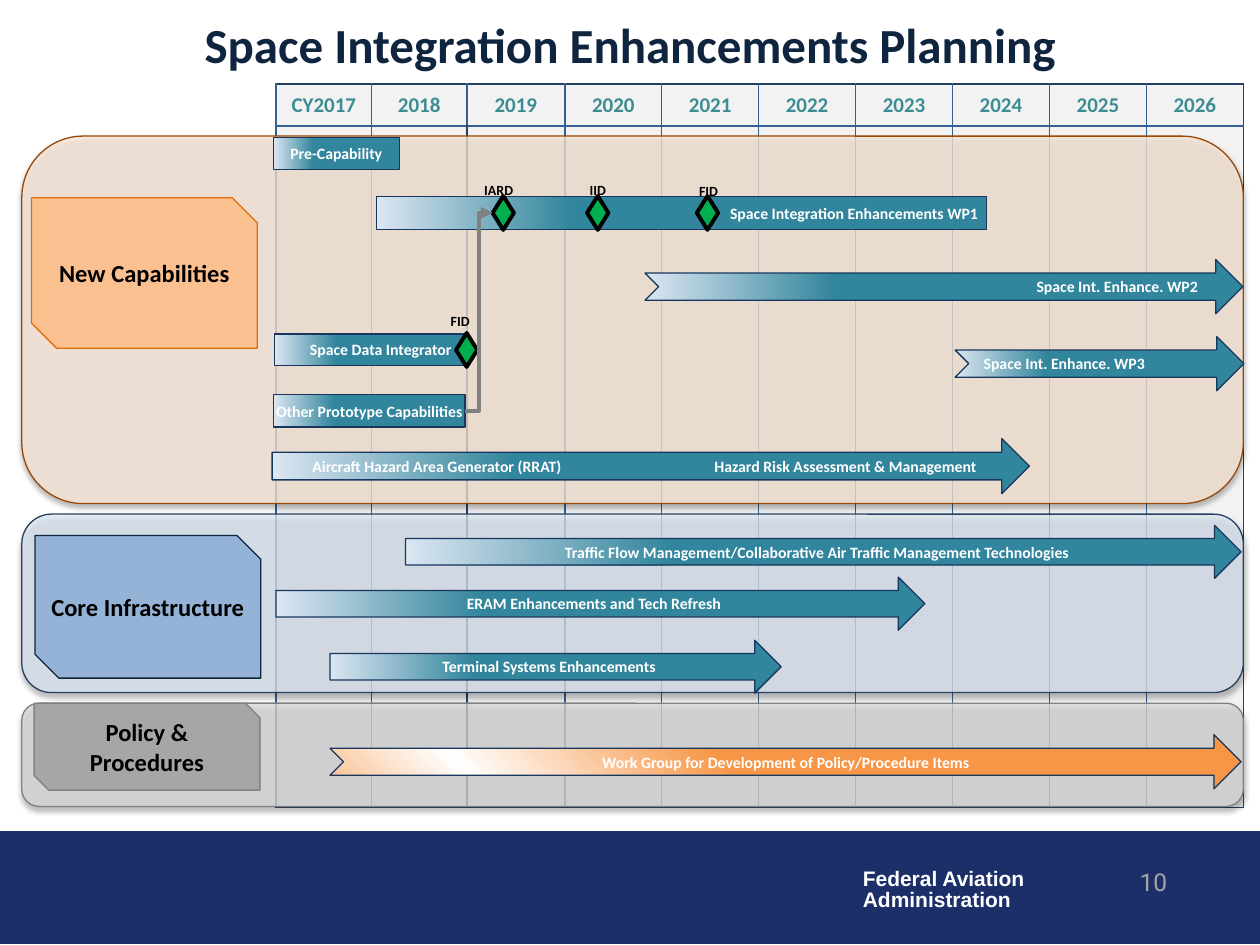
from lxml.etree import SubElement
from pptx import Presentation
from pptx.dml.color import RGBColor
from pptx.enum.shapes import MSO_CONNECTOR, MSO_SHAPE
from pptx.enum.text import MSO_ANCHOR, MSO_AUTO_SIZE, PP_ALIGN
from pptx.oxml import parse_xml
from pptx.oxml.ns import nsdecls, qn
from pptx.util import Pt

WHITE = RGBColor(0xFF, 0xFF, 0xFF)
BLACK = RGBColor(0x00, 0x00, 0x00)
NAVY = RGBColor(0x1D, 0x2F, 0x68)
TITLE_INK = RGBColor(0x0F, 0x24, 0x3E)
YEAR_INK = RGBColor(0x3C, 0x8C, 0x93)
PALE_GRAY = RGBColor(0xF2, 0xF2, 0xF2)
LIGHT_GRAY = RGBColor(0xD9, 0xD9, 0xD9)
MID_GRAY = RGBColor(0xA6, 0xA6, 0xA6)
DARK_GRAY = RGBColor(0x80, 0x80, 0x80)
GRID_BLUE = RGBColor(0x37, 0x60, 0x92)
DEEP_BLUE = RGBColor(0x25, 0x40, 0x61)
BAR_EDGE = RGBColor(0x17, 0x37, 0x5E)
TEAL = RGBColor(0x31, 0x85, 0x9C)
ICE = RGBColor(0xDC, 0xE6, 0xF2)
SKY = RGBColor(0x95, 0xB3, 0xD7)
CREAM = RGBColor(0xFD, 0xEA, 0xDA)
PEACH = RGBColor(0xFA, 0xC0, 0x90)
ORANGE = RGBColor(0xF7, 0x96, 0x46)
RUST = RGBColor(0x98, 0x48, 0x07)
AMBER = RGBColor(0xE4, 0x6C, 0x0A)
GREEN = RGBColor(0x00, 0xB0, 0x50)

TEAL_FADE = ([(0, TEAL), (68, TEAL), (100, ICE)], 180)
ORANGE_FADE = ([(0, PEACH), (16, WHITE), (44, ORANGE)], 315)
BOX, ARROW, NOTCHED = MSO_SHAPE.RECTANGLE, MSO_SHAPE.RIGHT_ARROW, MSO_SHAPE.NOTCHED_RIGHT_ARROW
LEFT, CENTER, RIGHT = PP_ALIGN.LEFT, PP_ALIGN.CENTER, PP_ALIGN.RIGHT


def apply(target, formats):
    """Set every attribute listed in a dict of format values."""
    for attribute, value in formats.items():
        setattr(target, attribute, value)


def write(frame, lines, size, color, align=CENTER, bold=True, font="Calibri", spacing=None,
          anchor=MSO_ANCHOR.MIDDLE, insets=None, tab=None):
    """Fill a text frame with evenly formatted paragraphs."""
    apply(frame, {"word_wrap": True, "auto_size": MSO_AUTO_SIZE.NONE, "vertical_anchor": anchor})
    if insets:
        sides = ("margin_left", "margin_top", "margin_right", "margin_bottom")
        apply(frame, {side: Pt(inset) for side, inset in zip(sides, insets)})
    frame.text = "\n".join(lines)
    for paragraph in frame.paragraphs:
        apply(paragraph, {"alignment": align, "line_spacing": spacing})
        if tab:
            stops = SubElement(paragraph._p.get_or_add_pPr(), qn("a:tabLst"))
            SubElement(stops, qn("a:tab"), pos=str(Pt(tab)), algn="l")
        for run in paragraph.runs:
            apply(run.font, {"size": Pt(size), "bold": bold, "name": font})
            run.font.color.rgb = color


def add_label(slide, place, lines, **style):
    """Add a text box."""
    write(slide.shapes.add_textbox(*map(Pt, place)).text_frame, lines, **style)


def add_figure(slide, kind, place, edge, weight, fill=None):
    """Add an outlined preset shape without a shadow."""
    figure = slide.shapes.add_shape(kind, *map(Pt, place))
    figure.shadow.inherit = False
    if fill is not None:
        figure.fill.solid()
        figure.fill.fore_color.rgb = fill
    figure.line.color.rgb = edge
    figure.line.width = Pt(weight)
    return figure


def add_panel(slide, top, height, fill, edge):
    """Add a translucent rounded swimlane with a soft shadow."""
    panel = add_figure(slide, MSO_SHAPE.ROUNDED_RECTANGLE, (12.5, top, 698, height), edge, 0.75, fill)
    properties = panel._element.spPr
    tint = properties.find(qn("a:solidFill"))[0]
    SubElement(tint, qn("a:alpha"), val="75000")
    properties.find(qn("a:effectLst")).append(parse_xml(
        f'<a:outerShdw {nsdecls("a")} blurRad="{Pt(3.1)}" dist="{Pt(1.8)}" dir="5400000" '
        'rotWithShape="0"><a:srgbClr val="000000"><a:alpha val="35000"/></a:srgbClr></a:outerShdw>'))


def add_heading(slide, place, text, fill, edge, insets=None):
    """Add the snipped name plate of a swimlane."""
    plate = add_figure(slide, MSO_SHAPE.SNIP_2_DIAG_RECTANGLE, place, edge, 0.75, fill)
    write(plate.text_frame, [text], size=14, color=BLACK, insets=insets)


def add_bar(slide, kind, place, text="", align=CENTER, pad=(0, 0), tab=None, fade=TEAL_FADE):
    """Add a gradient schedule bar with its caption."""
    bar = add_figure(slide, kind, place, BAR_EDGE, 0)
    bar.fill.gradient()
    gradient = bar._element.spPr.find(qn("a:gradFill"))
    stops, angle = fade
    stop_list = gradient.find(qn("a:gsLst"))
    stop_list.clear()
    for position, color in stops:
        stop = SubElement(stop_list, qn("a:gs"), pos=str(position * 1000))
        SubElement(stop, qn("a:srgbClr"), val=str(color))
    gradient.find(qn("a:lin")).set("ang", str(angle * 60000))
    if text:
        write(bar.text_frame, [text], size=9, color=WHITE, align=align,
              insets=(pad[0], 0, pad[1], 0), tab=tab)
    return bar


def add_milestone(slide, text, left, top, label_left, label_top):
    """Add a green decision diamond and its label."""
    add_label(slide, (label_left, label_top, 36, 17), [text], size=8, color=BLACK,
              anchor=MSO_ANCHOR.TOP)
    return add_figure(slide, MSO_SHAPE.DIAMOND, (left, top, 12.2, 19.4), BLACK, 2.25, GREEN)


def add_border(cell, side, color):
    """Draw one cell border."""
    border = parse_xml(f'<a:ln{side} {nsdecls("a")} w="{Pt(1)}"><a:solidFill>'
                       f'<a:srgbClr val="{color}"/></a:solidFill></a:ln{side}>')
    cell._tc.get_or_add_tcPr().insert("LRTB".index(side), border)


def add_calendar(slide):
    """Add the year grid behind the swimlanes."""
    years = ["CY2017", *map(str, range(2018, 2027))]
    widths, heights = [54.5, 54.5, 56] + [55.4] * 7, [24, 389.5]
    calendar = slide.shapes.add_table(2, len(years), Pt(157.8), Pt(48), Pt(sum(widths)),
                                      Pt(sum(heights))).table
    apply(calendar, {"first_row": False, "horz_banding": False})
    for row, height in zip(calendar.rows, heights):
        row.height = Pt(height)
    last = len(years) - 1
    for column, (year, width) in enumerate(zip(years, widths)):
        calendar.columns[column].width = Pt(width)
        for row in range(2):
            cell = calendar.cell(row, column)
            cell.fill.solid()
            cell.fill.fore_color.rgb = PALE_GRAY
            edges = {"L": row == 1 and column == 2,
                     "R": column == last or (row == 1 and column == 1),
                     "T": row == 0, "B": row == 1}
            for side, deep in edges.items():
                add_border(cell, side, DEEP_BLUE if deep else GRID_BLUE)
        heading = calendar.cell(0, column)
        write(heading.text_frame, [year], size=12, color=YEAR_INK)
        apply(heading, {"vertical_anchor": MSO_ANCHOR.MIDDLE, "margin_left": Pt(0.7),
                        "margin_top": Pt(0.7), "margin_right": Pt(0.7), "margin_bottom": 0})


def add_dependency(slide, source, target):
    """Join a bar to a milestone with an elbow arrow."""
    link = slide.shapes.add_connector(MSO_CONNECTOR.ELBOW, 0, 0, 0, 0)
    link.begin_connect(source, 3)
    link.end_connect(target, 1)
    link.line.color.rgb = DARK_GRAY
    link.line.width = Pt(2.25)
    SubElement(link.line._get_or_add_ln(), qn("a:tailEnd"), type="triangle")
    SubElement(link._element.spPr, qn("a:effectLst"))


def main():
    """Build the planning slide."""
    deck = Presentation()
    apply(deck, {"slide_width": Pt(720), "slide_height": Pt(540)})
    slide = deck.slides.add_slide(deck.slide_layouts[5])
    title = slide.shapes.title
    apply(title, {"left": Pt(36), "top": Pt(6), "width": Pt(648), "height": Pt(38)})
    write(title.text_frame, ["Space Integration Enhancements Planning"], size=28, color=TITLE_INK)

    add_figure(slide, BOX, (0, 475.2, 720, 64), NAVY, 0.75, NAVY)
    add_label(slide, (486, 493.2, 108, 32), ["Federal Aviation", "Administration"], size=12,
              color=WHITE, align=LEFT, font="Arial", spacing=0.85, anchor=MSO_ANCHOR.TOP)
    add_label(slide, (589, 491.8, 85, 36), ["10"], size=14, color=MID_GRAY, align=RIGHT,
              bold=False, font="Roboto", anchor=MSO_ANCHOR.TOP)
    add_calendar(slide)

    add_panel(slide, 77.8, 210, CREAM, RUST)
    add_heading(slide, (18, 113, 129, 86), "New Capabilities", PEACH, AMBER)
    add_panel(slide, 293.8, 102, ICE, DEEP_BLUE)
    add_heading(slide, (20, 306, 129, 81.5), "Core Infrastructure", SKY, TITLE_INK, (0, 3.6, 0, 3.6))
    add_panel(slide, 401.8, 59, LIGHT_GRAY, DARK_GRAY)
    add_heading(slide, (19.5, 401.8, 129, 49.7), "Policy & Procedures", MID_GRAY, DARK_GRAY)

    add_bar(slide, BOX, (156.2, 78.4, 72, 18.7), "Pre-Capability")
    add_bar(slide, BOX, (215.3, 112.3, 348.5, 18.7), "Space Integration Enhancements WP1", RIGHT, (0, 5))
    add_bar(slide, NOTCHED, (368.6, 148.3, 341.6, 31), "Space Int. Enhance. WP2", RIGHT, (0, 18))
    add_bar(slide, NOTCHED, (545.8, 192.3, 165, 31))
    add_label(slide, (555, 198.8, 141, 18), ["Space Int. Enhance. WP3"], size=9, color=WHITE, align=LEFT)
    add_bar(slide, BOX, (157, 190.8, 110, 18), "Space Data Integrator", pad=(11, 0))
    prototypes = add_bar(slide, BOX, (156.2, 225.4, 109.6, 18.7), "Other Prototype Capabilities")
    add_bar(slide, ARROW, (155.5, 250.6, 432.7, 31.5),
            "Aircraft Hazard Area Generator (RRAT)\tHazard Risk Assessment & Management",
            LEFT, (23, 0), tab=229.7)
    add_bar(slide, ARROW, (231.8, 300.2, 477.4, 30.3),
            "Traffic Flow Management/Collaborative Air Traffic Management Technologies")
    add_bar(slide, ARROW, (157.7, 329.8, 370.8, 30.3), "ERAM Enhancements and Tech Refresh")
    add_bar(slide, ARROW, (188.6, 365.8, 257.8, 30.3), "Terminal Systems Enhancements")
    add_bar(slide, NOTCHED, (188.6, 419.8, 520.6, 31),
            "Work Group for Development of Policy/Procedure Items", fade=ORANGE_FADE)

    readiness = add_milestone(slide, "IARD", 281.5, 112, 267, 100)
    add_milestone(slide, "IID", 335.5, 112, 323.7, 100)
    add_milestone(slide, "FID", 398.2, 112, 386.9, 100.8)
    add_milestone(slide, "FID", 260.6, 190.3, 245, 175)
    add_dependency(slide, prototypes, readiness)
    deck.save("out.pptx")


if __name__ == "__main__":
    main()
